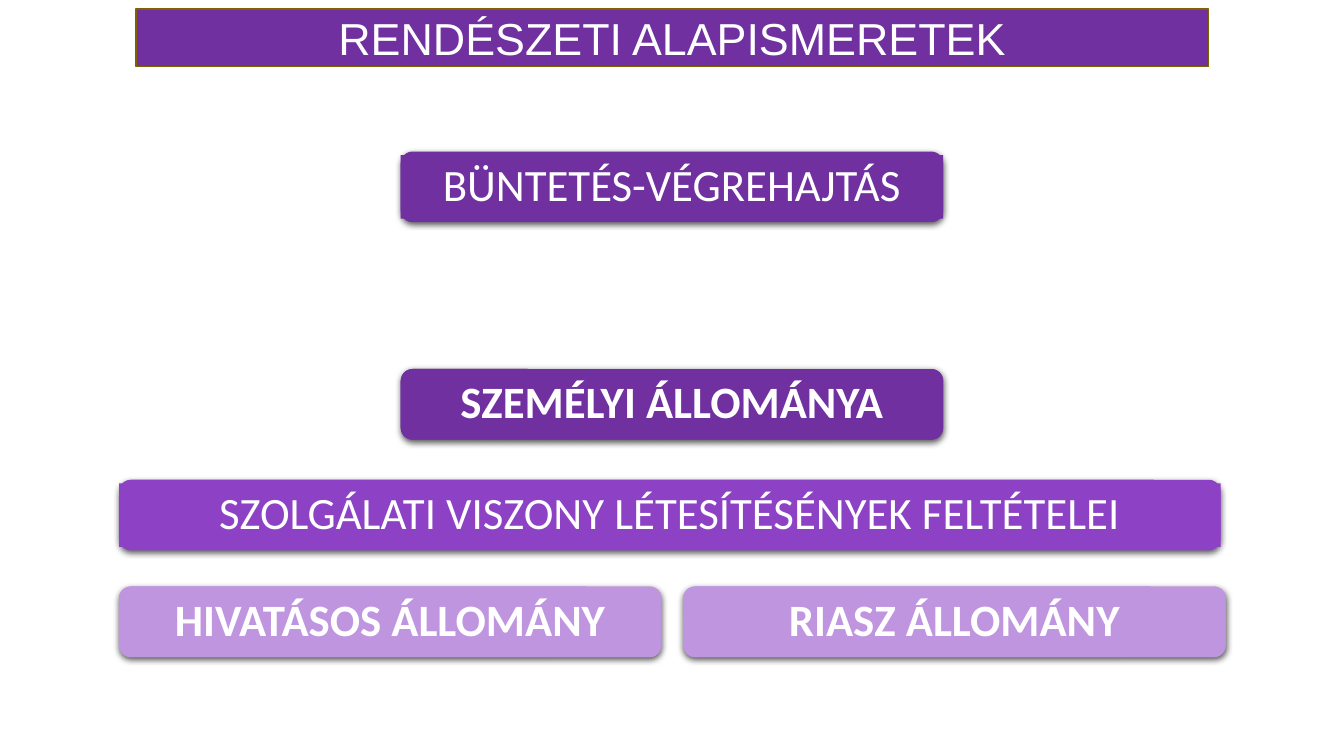
from lxml.etree import SubElement
from pptx import Presentation
from pptx.dml.color import RGBColor
from pptx.enum.shapes import MSO_SHAPE as Shape
from pptx.enum.text import MSO_ANCHOR as Anchor, PP_ALIGN as Align
from pptx.oxml.ns import qn
from pptx.util import Cm, Pt

WHITE = RGBColor(0xFF, 0xFF, 0xFF)
PURPLE = RGBColor(0x70, 0x30, 0xA0)
VIOLET = RGBColor(0x8D, 0x42, 0xC6)
LILAC = RGBColor(0xBF, 0x95, 0xDF)
OLIVE = RGBColor(0x80, 0x60, 0x00)

SLIDE_WIDTH, SLIDE_HEIGHT = Cm(33.87), Cm(19.05)
CARD_WIDTH, CARD_HEIGHT = Cm(13.67), Cm(1.78)
LEFT_EDGE, CARD_GAP = Cm(3), Cm(0.55)
CENTRED_LEFT = (SLIDE_WIDTH - CARD_WIDTH) // 2


def add_block(shapes, preset, box, colour):
    block = shapes.add_shape(preset, *box)
    block.shadow.inherit = False
    block.fill.solid()
    block.fill.fore_color.rgb = colour
    block.line.fill.background()
    return block


def write_centred(block, text, font_name, bold=False, spacing=1.0):
    frame = block.text_frame
    frame.word_wrap = True
    frame.vertical_anchor = Anchor.MIDDLE
    paragraph = frame.paragraphs[0]
    paragraph.alignment = Align.CENTER
    paragraph.line_spacing = spacing
    run = paragraph.add_run()
    run.text = text
    run.font.name = font_name
    run.font.size = Pt(32)
    run.font.bold = bold
    run.font.color.rgb = WHITE


def cast_shadow(block):
    """Give the block a soft black shadow straight below it."""
    effects = block._element.spPr.find(qn("a:effectLst"))
    shadow = SubElement(effects, qn("a:outerShdw"), blurRad=str(Pt(4.5)),
                        dist=str(Pt(1.5)), dir="5400000", algn="ctr", rotWithShape="0")
    black = SubElement(shadow, qn("a:srgbClr"), val="000000")
    SubElement(black, qn("a:alpha"), val="63000")


def add_title(slide, box, text):
    banner = add_block(slide.shapes, Shape.RECTANGLE, box, PURPLE)
    banner.line.color.rgb = OLIVE
    banner.line.width = Pt(1)
    write_centred(banner, text, "Arial")


def add_card(slide, box, text, colour, bold):
    """Place a shadowed plate with its label; a regular label is a square-cornered strip."""
    left, top, width, height = box
    card = slide.shapes.add_group_shape()
    cast_shadow(add_block(card.shapes, Shape.ROUNDED_RECTANGLE, box, colour))
    if bold:
        label = add_block(card.shapes, Shape.ROUNDED_RECTANGLE, box, colour)
        frame = label.text_frame
        frame.margin_left = frame.margin_right = Cm(0.64)
        frame.margin_top = frame.margin_bottom = Cm(0.64)
    else:
        inset = Cm(0.09)
        strip = (left, top + inset, width, height - 2 * inset)
        label = add_block(card.shapes, Shape.RECTANGLE, strip, colour)
    write_centred(label, text, "Calibri", bold, spacing=0.9)


def add_staff_row(slide, box, names):
    left, top, width, height = box
    for column, name in enumerate(names):
        card_left = left + column * (width + CARD_GAP)
        add_card(slide, (card_left, top, width, height), name, LILAC, True)


def main():
    deck = Presentation()
    deck.slide_width, deck.slide_height = SLIDE_WIDTH, SLIDE_HEIGHT
    slide = deck.slides.add_slide(deck.slide_layouts[6])
    add_title(slide, (Cm(3.43), Cm(0.23), Cm(27.03), Cm(1.45)), "RENDÉSZETI ALAPISMERETEK")
    add_card(slide, (CENTRED_LEFT, Cm(9.3), CARD_WIDTH, CARD_HEIGHT),
             "SZEMÉLYI ÁLLOMÁNYA", PURPLE, True)
    add_card(slide, (CENTRED_LEFT, Cm(3.82), CARD_WIDTH, CARD_HEIGHT),
             "BÜNTETÉS-VÉGREHAJTÁS", PURPLE, False)
    add_card(slide, (LEFT_EDGE, Cm(12.09), Cm(27.76), CARD_HEIGHT),
             "SZOLGÁLATI VISZONY LÉTESÍTÉSÉNYEK FELTÉTELEI", VIOLET, False)
    add_staff_row(slide, (LEFT_EDGE, Cm(14.78), CARD_WIDTH, CARD_HEIGHT),
                  ("HIVATÁSOS ÁLLOMÁNY", "RIASZ ÁLLOMÁNY"))
    deck.save("out.pptx")


if __name__ == "__main__":
    main()
